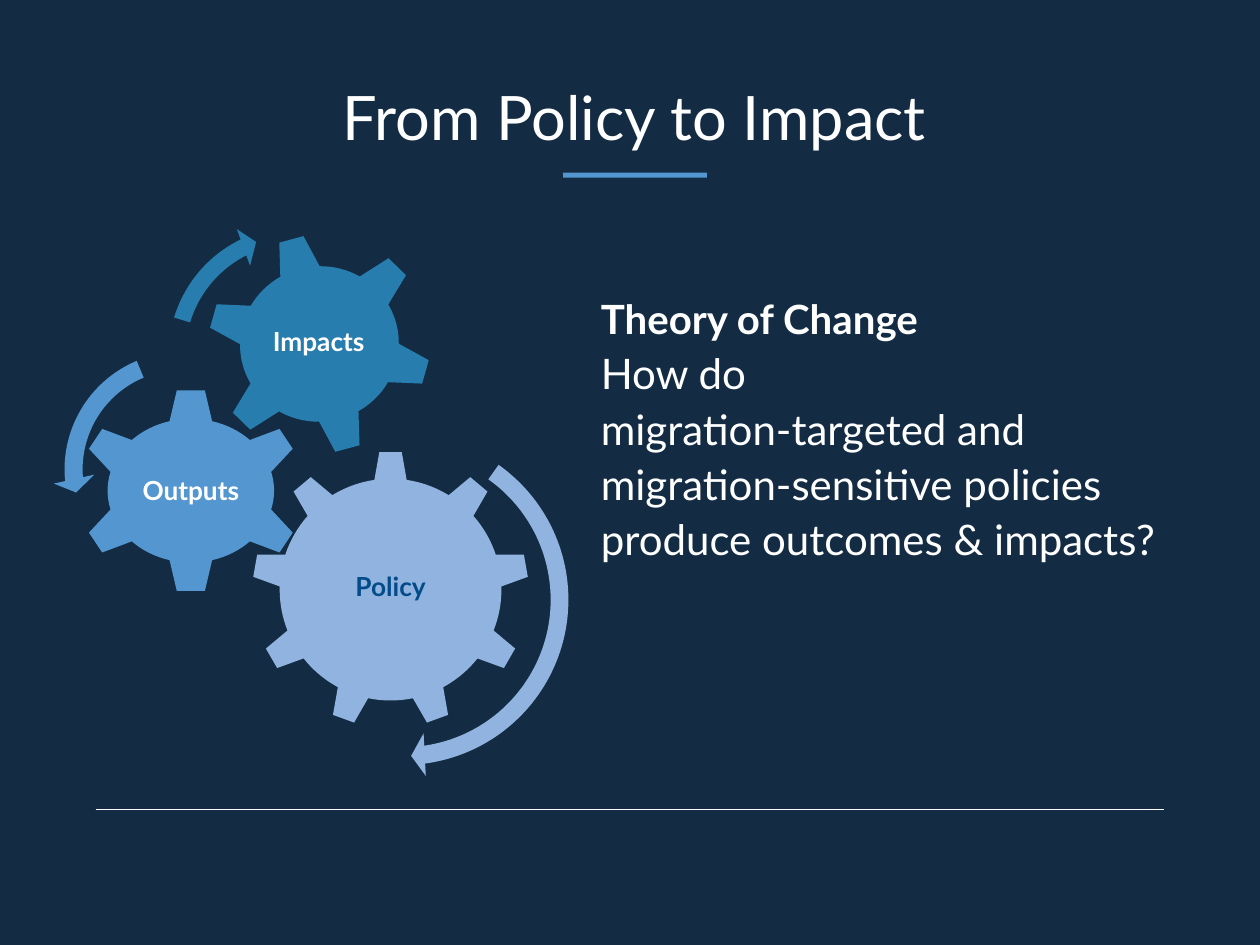
from pptx import Presentation
from pptx.dml.color import RGBColor
from pptx.enum.shapes import MSO_CONNECTOR, MSO_SHAPE as SHAPE
from pptx.enum.text import MSO_ANCHOR as ANCHOR, MSO_AUTO_SIZE as AUTO, PP_ALIGN as ALIGN
from pptx.oxml import parse_xml
from pptx.oxml.ns import nsdecls
from pptx.util import Inches, Pt

FONT = "Lato"
NAVY, WHITE, INK = "142C43", "FFFFFF", "044B89"
PALE, BLUE, TEAL = "90B4DF", "5496D0", "277DAE"

# label, label colour, fill, gear kind, gear box, rotation, label box
GEARS = [
    ("Policy", INK, PALE, SHAPE.GEAR_9, (2, 3.58, 2.2, 2.2), 0, (2.44, 4.1, 1.32, 1.13)),
    ("Outputs", WHITE, BLUE, SHAPE.GEAR_6, (0.61, 3.08, 1.81, 1.63), 0, (1.05, 3.5, 0.93, 0.81)),
    ("Impacts", WHITE, TEAL, SHAPE.GEAR_6, (1.64, 1.85, 1.79, 1.76), 345, (2.03, 2.23, 1, 0.99)),
]

# fill, arrow kind, left, top, diameter, rotation, adjustments
ARROWS = [
    (PALE, SHAPE.CIRCULAR_ARROW, 1.79, 3.35, 2.82, 40.4, (0.05, 2.99, 25.02, 158.92, 0.06)),
    (BLUE, SHAPE.LEFT_CIRCULAR_ARROW, 0.42, 2.7, 2.05, 0, (0.07, 4.3, 104.89, 148.38, 0.08)),
    (TEAL, SHAPE.CIRCULAR_ARROW, 1.25, 1.71, 2.21, 21.7, (0.06, 3.94, 133.14, 105.08, 0.07)),
]


def rgb(color):
    return RGBColor.from_string(color)


def inches(*lengths):
    return [Inches(n) for n in lengths]


def set_margins(tf, margin):
    tf.margin_left = tf.margin_right = tf.margin_top = tf.margin_bottom = Inches(margin)


def format_paragraph(p, size, color=WHITE, bold=False, align=ALIGN.LEFT, spacing=1.0):
    p.alignment = align
    p.line_spacing = spacing
    for r in p.runs:
        r.font.name = FONT
        r.font.size = Pt(size)
        r.font.bold = bold
        r.font.color.rgb = rgb(color)


def add_filled(slide, kind, box, fill, rotation=0, adjustments=()):
    sp = slide.shapes.add_shape(kind, *inches(*box))
    sp.shadow.inherit = False
    sp.fill.solid()
    sp.fill.fore_color.rgb = rgb(fill)
    sp.line.fill.background()
    sp.rotation = rotation
    for i, value in enumerate(adjustments):
        sp.adjustments[i] = value


def add_label(slide, text, box, color):
    tf = slide.shapes.add_textbox(*inches(*box)).text_frame
    tf.word_wrap = True
    tf.vertical_anchor = ANCHOR.MIDDLE
    set_margins(tf, 0.02)
    tf.text = text
    format_paragraph(tf.paragraphs[0], 15, color, True, ALIGN.CENTER, 0.9)


def add_title(slide):
    title = slide.shapes.title
    title.left, title.top, title.width, title.height = inches(2.66, 0.63, 4.75, 0.59)
    tf = title.text_frame
    tf.word_wrap = False
    tf.auto_size = AUTO.SHAPE_TO_FIT_TEXT
    tf.vertical_anchor = ANCHOR.TOP
    set_margins(tf, 0)
    tf.text = "From Policy to Impact"
    format_paragraph(tf.paragraphs[0], 35, align=ALIGN.CENTER)
    add_filled(slide, SHAPE.RECTANGLE, (4.47, 1.37, 1.14, 0.04), BLUE)


def add_gears(slide):
    for text, color, fill, kind, box, rotation, label_box in GEARS:
        add_filled(slide, kind, box, fill, rotation)
        add_label(slide, text, label_box, color)
    for fill, kind, left, top, size, rotation, adjustments in ARROWS:
        add_filled(slide, kind, (left, top, size, size), fill, rotation, adjustments)


def add_rule(slide):
    line = slide.shapes.add_connector(MSO_CONNECTOR.STRAIGHT, *inches(0.76, 6.42, 9.24, 6.42))
    line.line.color.rgb = rgb(WHITE)
    line.line.width = Pt(0.25)
    line._element.spPr.append(parse_xml(f"<a:effectLst {nsdecls('a')}/>"))


def add_question(slide):
    tf = slide.shapes.add_textbox(*inches(4.67, 2.25, 5, 2.3)).text_frame
    tf.word_wrap = True
    tf.auto_size = AUTO.SHAPE_TO_FIT_TEXT
    tf.text = ("Theory of Change\nHow do\n"
               "migration-targeted and migration-sensitive policies produce outcomes & impacts?")
    heading, *body = tf.paragraphs
    format_paragraph(heading, 23, bold=True, align=ALIGN.JUSTIFY, spacing=1.1)
    for p in body:
        format_paragraph(p, 24, spacing=1.1)


def main():
    prs = Presentation()
    prs.slide_width, prs.slide_height = inches(10, 7.5)
    slide = prs.slides.add_slide(prs.slide_layouts[5])
    slide.background.fill.solid()
    slide.background.fill.fore_color.rgb = rgb(NAVY)
    add_title(slide)
    add_gears(slide)
    add_rule(slide)
    add_question(slide)
    prs.save("out.pptx")


if __name__ == "__main__":
    main()
